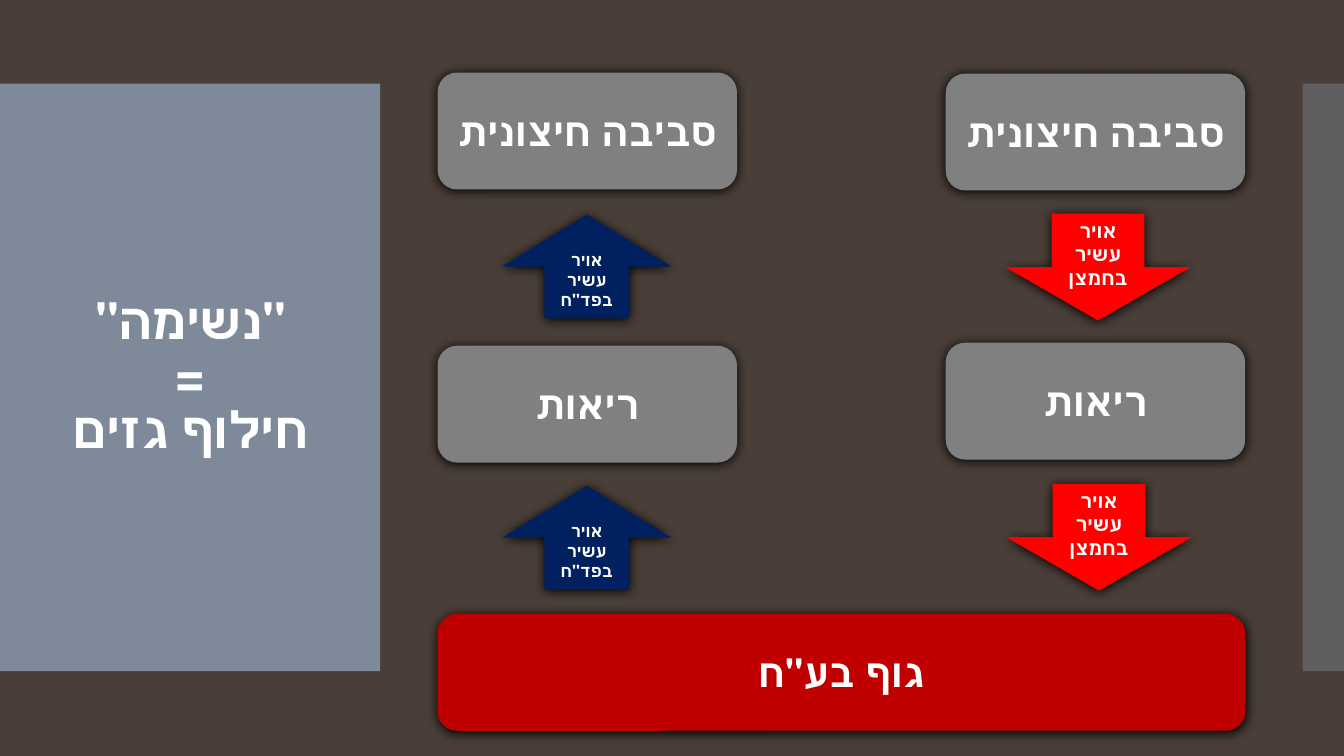
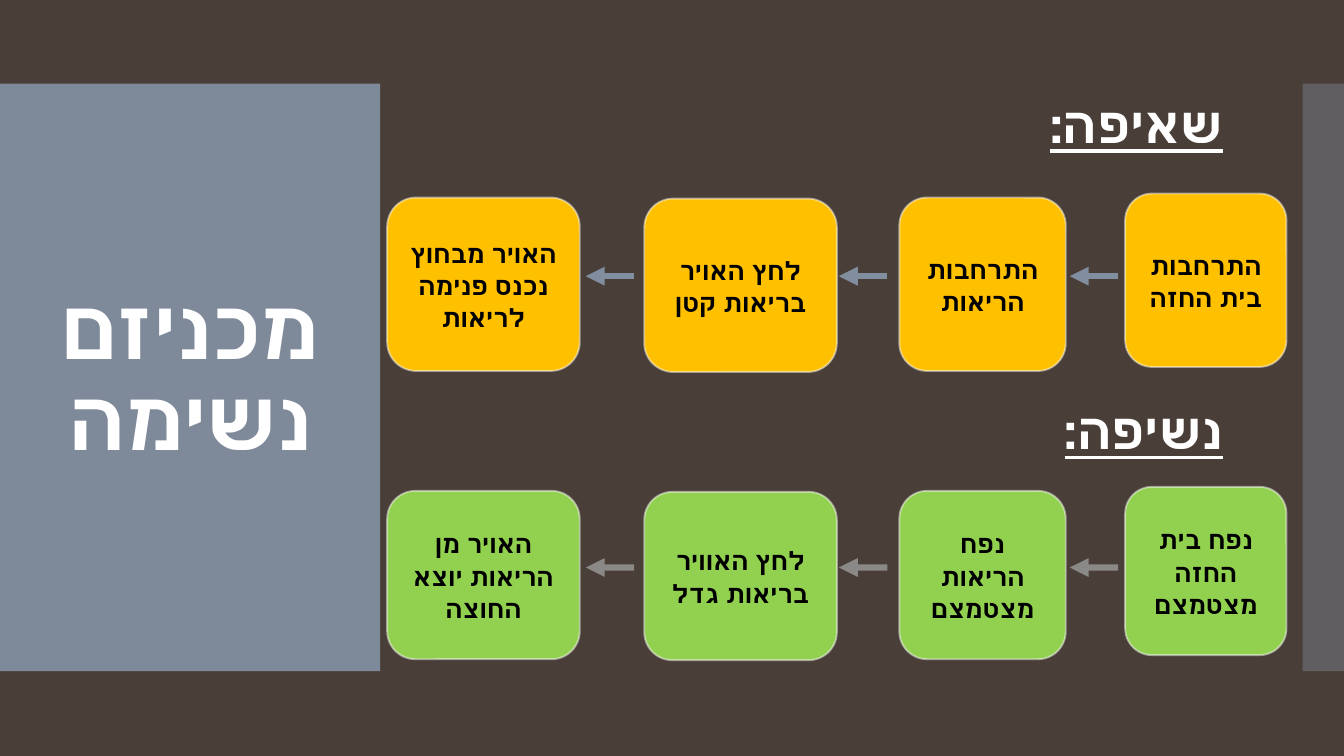
from lxml.etree import SubElement
from pptx import Presentation
from pptx.dml.color import RGBColor
from pptx.enum.shapes import MSO_CONNECTOR, MSO_SHAPE
from pptx.enum.text import MSO_ANCHOR, PP_ALIGN
from pptx.oxml.ns import qn
from pptx.util import Emu, Pt

SCALE = 9144  # 100 px to the inch
WIDTH, HEIGHT = 1333, 750

BROWN = RGBColor(0x4A, 0x3F, 0x38)
SLATE = RGBColor(0x81, 0x8E, 0x9F)
MIST = RGBColor(0xCD, 0xD2, 0xD9)
GREY = RGBColor(0x80, 0x80, 0x80)
CRIMSON = RGBColor(0xC0, 0x00, 0x00)
RED = RGBColor(0xFF, 0x00, 0x00)
NAVY = RGBColor(0x00, 0x20, 0x60)
AMBER = RGBColor(0xFF, 0xC0, 0x00)
GREEN = RGBColor(0x92, 0xD0, 0x50)
PALE = RGBColor(0xF9, 0xF9, 0xF9)
WHITE = RGBColor(0xFF, 0xFF, 0xFF)
BLACK = RGBColor(0x00, 0x00, 0x00)

CABIN, CALIBRI = "Cabin", "Calibri"

STEPS = [(1116, 160, 0), (892, 165, 4), (639, 191, 5), (384, 191, 4)]
ARROWS = [1109, 880, 629]
INHALE = [
    "התרחבות בית החזה",
    "התרחבות הריאות",
    "לחץ האויר בריאות קטן",
    "האויר מבחוץ נכנס פנימה לריאות",
]
EXHALE = [
    "נפח בית החזה מצטמצם",
    "נפח הריאות מצטמצם",
    "לחץ האוויר בריאות גדל",
    "האויר מן הריאות יוצא החוצה",
]


def px(*nums):
    return [Emu(n * SCALE) for n in nums]


def fade(holder, percent):
    """Make the solid colour inside an XML element partly transparent."""
    color = holder.find(".//" + qn("a:srgbClr"))
    SubElement(color, qn("a:alpha"), val=str(percent * 1000))


def write(shape, text, size, font=CABIN, color=WHITE, align=PP_ALIGN.CENTER,
          lines=1.0, tight=False, under=False):
    """Put bold right-to-left text in a shape, centred vertically."""
    frame = shape.text_frame
    frame.word_wrap = True
    frame.vertical_anchor = MSO_ANCHOR.MIDDLE
    frame.text = text
    para = frame.paragraphs[0]
    para.alignment = align
    para.line_spacing = lines
    para._p.get_or_add_pPr().set("rtl", "1")
    for run in para.runs:
        run.font.name = font
        run.font.size = Pt(size)
        run.font.bold = True
        run.font.underline = under
        run.font.color.rgb = color
        props = run._r.get_or_add_rPr()
        props.set("lang", "he-IL")
        if tight:
            props.set("spc", "-60")


def draw(shapes, kind, box, fill):
    shape = shapes.add_shape(kind, *px(*box))
    shape.shadow.inherit = False
    shape.fill.solid()
    shape.fill.fore_color.rgb = fill
    shape.line.fill.background()
    return shape


def raised(slide, kind, box, fill, text, size):
    """Add a labelled shape with a soft dark shadow."""
    shape = draw(slide.shapes, kind, box, fill)
    glow = SubElement(shape._element.spPr.find(qn("a:effectLst")),
                      qn("a:outerShdw"), blurRad="107950", dist="12700",
                      dir="5400000", algn="ctr", rotWithShape="0")
    SubElement(glow, qn("a:srgbClr"), val=str(BLACK))
    write(shape, text, size)


def step(shapes, box, fill, text):
    shape = draw(shapes, MSO_SHAPE.ROUNDED_RECTANGLE, box, fill)
    shape.line.color.rgb = PALE
    shape.line.width = Pt(1.35)
    fade(shape._element.spPr.find(qn("a:ln")), 50)
    write(shape, text, 18, color=BLACK, lines=1.07)


def arrow(shapes, left, right, y, color, percent):
    """Add an arrow that points left."""
    line = shapes.add_connector(MSO_CONNECTOR.STRAIGHT, *px(right, y, left, y))
    line.line.color.rgb = color
    line.line.width = Pt(4.5)
    props = line._element.spPr
    edge = props.find(qn("a:ln"))
    if percent < 100:
        fade(edge, percent)
    SubElement(edge, qn("a:tailEnd"), type="triangle")
    SubElement(props, qn("a:effectLst"))


def heading(slide, top, text):
    box = slide.shapes.add_textbox(*px(423, top, 800, 64))
    write(box, text, 36, CALIBRI, align=PP_ALIGN.RIGHT, lines=0.9, under=True)


def chain(slide, texts, top, height, y, fill, color, percent=100):
    """Add a group of four steps, read from right to left."""
    shapes = slide.shapes.add_group_shape().shapes
    for (left, width, drop), text in zip(STEPS, texts):
        step(shapes, (left, top + drop, width, height), fill, text)
    for right in ARROWS:
        arrow(shapes, right - 48, right, y, color, percent)


def start(deck, title, size, font):
    """Add a slide with the side bands and its title."""
    slide = deck.slides.add_slide(deck.slide_layouts[6])
    for left, width, percent in [(0, 377, 95), (1292, 41, 40)]:
        band = draw(slide.shapes, MSO_SHAPE.RECTANGLE,
                    (left, 83, width, 583), SLATE)
        fade(band._element.spPr.find(qn("a:solidFill")), percent)
    box = slide.shapes.add_textbox(*px(28, 123, 322, 503))
    write(box, title, size, font, lines=0.9, tight=True)
    return slide


def gases(deck):
    slide = start(deck, '"נשימה"\v=\vחילוף גזים', 36, CABIN)
    round_box = MSO_SHAPE.ROUNDED_RECTANGLE
    for left, tops in [(938, (73, 340)), (434, (72, 343))]:
        for top, text in zip(tops, ("סביבה חיצונית", "ריאות")):
            raised(slide, round_box, (left, top, 297, 116), GREY, text, 28)
    raised(slide, round_box, (434, 609, 801, 116), CRIMSON, 'גוף בע"ח', 28)
    for left, top in [(997, 212), (998, 480)]:
        raised(slide, MSO_SHAPE.DOWN_ARROW, (left, top, 184, 106), RED,
               "אויר עשיר בחמצן", 14)
    for top in (213, 482):
        raised(slide, MSO_SHAPE.UP_ARROW, (498, top, 168, 103), NAVY,
               'אויר עשיר בפד"ח', 12)


def motion(deck):
    slide = start(deck, "מכניזם נשימה", 60, CALIBRI)
    heading(slide, 94, "שאיפה:")
    chain(slide, INHALE, 192, 172, 274, AMBER, SLATE)
    heading(slide, 398, "נשיפה:")
    chain(slide, EXHALE, 483, 167, 563, GREEN, MIST, 50)


def main():
    deck = Presentation()
    deck.slide_width, deck.slide_height = px(WIDTH, HEIGHT)
    back = deck.slide_master.background.fill
    back.solid()
    back.fore_color.rgb = BROWN
    gases(deck)
    motion(deck)
    deck.save("out.pptx")


if __name__ == "__main__":
    main()
